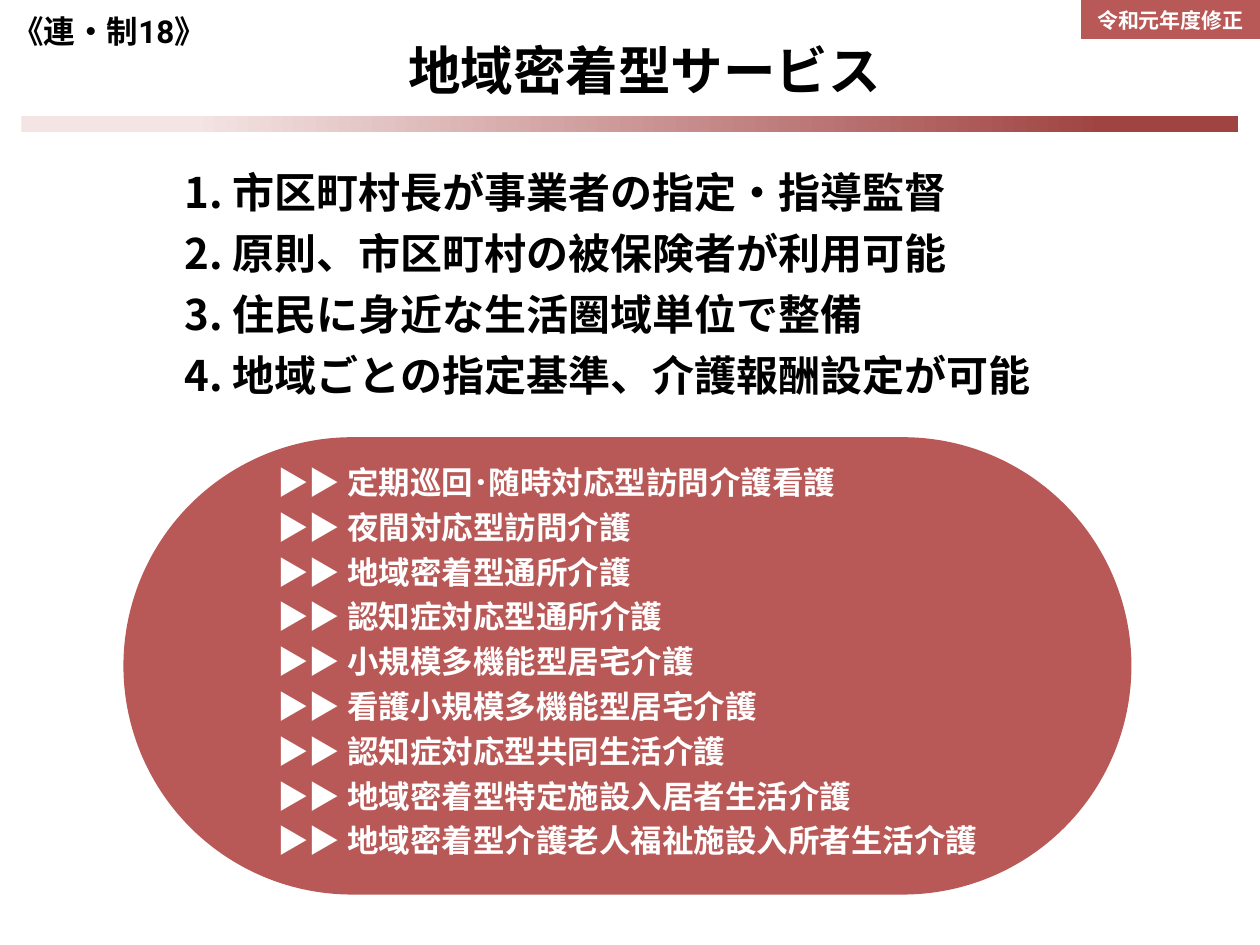
from pptx import Presentation
from pptx.dml.color import RGBColor
from pptx.enum import shapes, text
from pptx.oxml import ns
from pptx.util import Inches, Pt
from lxml import etree

FONT = "Noto Sans CJK JP"
RED, BLACK, WHITE = "B95957", "000000", "FFFFFF"
FEATURES = [
    "市区町村長が事業者の指定・指導監督",
    "原則、市区町村の被保険者が利用可能",
    "住民に身近な生活圏域単位で整備",
    "地域ごとの指定基準、介護報酬設定が可能",
]
SERVICES = [
    "定期巡回･随時対応型訪問介護看護",
    "夜間対応型訪問介護",
    "地域密着型通所介護",
    "認知症対応型通所介護",
    "小規模多機能型居宅介護",
    "看護小規模多機能型居宅介護",
    "認知症対応型共同生活介護",
    "地域密着型特定施設入居者生活介護",
    "地域密着型介護老人福祉施設入所者生活介護",
]


def rgb(value):
    return RGBColor.from_string(value)


def place(sp, box):
    for name, value in zip(("left", "top", "width", "height"), box):
        setattr(sp, name, Inches(value))


def add_run(p, content, size, color, font=FONT):
    r = p.add_run()
    r.text = content
    for name, value in dict(size=Pt(size), bold=True, name=font).items():
        setattr(r.font, name, value)
    r.font.color.rgb = rgb(color)
    ea = etree.SubElement(r.font._element, ns.qn("a:ea"))
    ea.set("typeface", FONT)


def write(sp, lines, size, color, hanging=False, anchor=text.MSO_ANCHOR.TOP,
          **spacing):
    """Each line is a list of (text, font) runs or a plain string."""
    tf = sp.text_frame
    tf.word_wrap, tf.vertical_anchor = True, anchor
    for i, line in enumerate(lines):
        p = tf.paragraphs[0] if i == 0 else tf.add_paragraph()
        for name, value in spacing.items():
            setattr(p, name, value)
        if hanging:
            pPr = p._p.get_or_add_pPr()
            pPr.set("marL", str(Inches(0.79)))
            pPr.set("indent", str(Inches(-0.4)))
        for content, font in [(line, FONT)] if isinstance(line, str) else line:
            add_run(p, content, size, color, font)


def add_text(s, box, lines, size, color, **options):
    sp = s.shapes.add_textbox(*map(Inches, box))
    write(sp, lines, size, color, **options)


def add_block(s, kind, box):
    sp = s.shapes.add_shape(kind, *map(Inches, box))
    sp.shadow.inherit = False
    sp.line.fill.background()
    sp.fill.solid()
    sp.fill.fore_color.rgb = rgb(RED)
    return sp


def add_gradient_bar(s, box, stops):
    sp = add_block(s, shapes.MSO_SHAPE.RECTANGLE, box)
    sp.fill.gradient()
    sp.fill.gradient_angle = 0
    for stop, (position, color) in zip(sp.fill.gradient_stops, stops):
        stop.position = position
        stop.color.rgb = rgb(color)


def main():
    prs = Presentation()
    prs.slide_width, prs.slide_height = Inches(10), Inches(7.5)
    s = prs.slides.add_slide(prs.slide_layouts[5])
    middle = text.MSO_ANCHOR.MIDDLE

    place(s.shapes.title, (3.14, 0.19, 4.68, 0.72))
    write(s.shapes.title, ["地域密着型サービス"], 30, BLACK, anchor=middle,
          alignment=text.PP_ALIGN.LEFT)
    add_gradient_bar(s, (0.17, 0.92, 9.66, 0.13),
                     [(0.14, "F4E4E4"), (0.89, "A04442")])

    panel = add_block(s, shapes.MSO_SHAPE.ROUNDED_RECTANGLE, (0.98, 3.47, 8, 3.63))
    panel.adjustments[0] = 0.5
    add_text(s, (0.98, 1.27, 8.13, 2.06),
             [f"{i}. {item}" for i, item in enumerate(FEATURES, 1)], 24, BLACK,
             hanging=True, line_spacing=Pt(28.9), space_before=Pt(6))
    add_text(s, (1.71, 3.62, 7.81, 3.33), [f"▶▶ {item}" for item in SERVICES],
             18, WHITE, hanging=True, line_spacing=Pt(22), space_before=Pt(3.6))

    add_text(s, (0, 0, 2, 0.49),
             [[("《連・制", FONT), ("18", "Roboto"), ("》", FONT)]], 18, BLACK,
             anchor=middle, line_spacing=Pt(22))
    tag = add_block(s, shapes.MSO_SHAPE.RECTANGLE, (8.58, -0.02, 1.42, 0.33))
    for side in ("left", "right", "top", "bottom"):
        inset = 0.08 if side in ("left", "right") else 0.04
        setattr(tag.text_frame, f"margin_{side}", Inches(inset))
    write(tag, ["令和元年度修正"], 12, WHITE, anchor=middle,
          alignment=text.PP_ALIGN.CENTER, line_spacing=Pt(16.8))

    prs.save("out.pptx")


if __name__ == "__main__":
    main()
